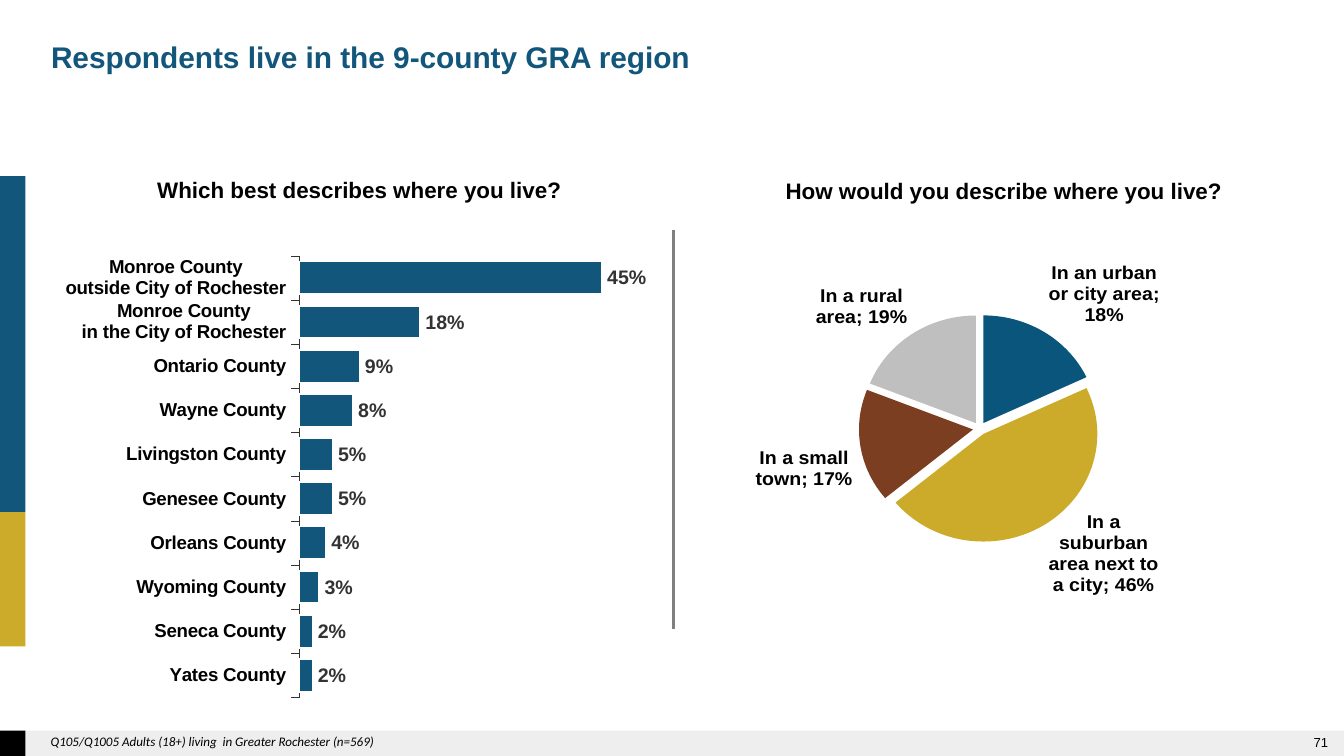
import pptx
import pptx.util
import pptx.dml.color
import pptx.chart.data
import pptx.enum.chart
import pptx.enum.dml
import pptx.enum.shapes
import pptx.enum.text
import pptx.oxml
import pptx.oxml.ns

Cm = pptx.util.Cm
Pt = pptx.util.Pt
RGB = pptx.dml.color.RGBColor.from_string
Align = pptx.enum.text.PP_ALIGN
Anchor = pptx.enum.text.MSO_ANCHOR
Fit = pptx.enum.text.MSO_AUTO_SIZE
Kind = pptx.enum.chart.XL_CHART_TYPE
Place = pptx.enum.chart.XL_LABEL_POSITION
Mark = pptx.enum.chart.XL_TICK_MARK
qn = pptx.oxml.ns.qn
space = pptx.oxml.ns.nsdecls("c")


class Theme:
    blue, gold, black, grey = "12567C", "CCAB2B", "000000", "808080"
    dark, band, white = "333333", "595959", "FFFFFF"
    slices = ["09557C", "CCAB2B", "7C3E20", "BFBFBF"]
    font, serif = "Arial", "Calibri"
    title, head, label, axis, small = 16, 12, 10.5, 10, 7


def style(font, size, color, bold=True, name=Theme.font):
    font.name = name
    font.size = Pt(size)
    font.bold = bold
    font.color.rgb = RGB(color)


def draw(box, kind, data, layout):
    chart = slide.shapes.add_chart(kind, *map(Cm, box), data).chart
    chart.has_legend = False
    chart.has_title = False
    style(chart.font, Theme.label, Theme.dark)
    parts = "".join(f'<c:{tag} val="{val}"/>' for tag, val in zip("xywh", layout))
    area = chart._chartSpace.find(".//" + qn("c:plotArea"))
    for old in area.findall(qn("c:layout")):
        area.remove(old)
    area.insert(0, pptx.oxml.parse_xml(
        f'<c:layout {space}><c:manualLayout><c:layoutTarget val="inner"/>'
        f'<c:xMode val="edge"/><c:yMode val="edge"/>{parts}</c:manualLayout></c:layout>'))
    plot = chart.plots[0]
    plot.vary_by_categories = kind == Kind.PIE
    labels = plot.series[0].data_labels
    labels.show_value = True
    labels.number_format = "0%"
    labels.number_format_is_linked = False
    labels.position = Place.OUTSIDE_END
    return chart, plot.series[0], labels


deck = pptx.Presentation()
deck.slide_width = Cm(25.4)
deck.slide_height = Cm(14.29)
slide = deck.slides.add_slide(deck.slide_layouts[5])

blocks = [
    (0, 13.81, 25.4, 0.48, Theme.band),
    (0, 3.33, 0.48, 6.35, Theme.blue),
    (0, 9.68, 0.48, 2.54, Theme.gold),
    (0, 13.81, 0.48, 0.48, Theme.black),
]
for *box, color in blocks:
    block = slide.shapes.add_shape(pptx.enum.shapes.MSO_SHAPE.RECTANGLE, *map(Cm, box))
    block.shadow.inherit = False
    block.fill.solid()
    block.fill.fore_color.rgb = RGB(color)
    block.line.fill.background()
    if color == Theme.band:
        tint = block._element.spPr.find(".//" + qn("a:srgbClr"))
        tint.append(pptx.oxml.parse_xml(
            f'<a:alpha {pptx.oxml.ns.nsdecls("a")} val="10000"/>'))

title = slide.shapes.title
title.left, title.top, title.width, title.height = map(Cm, (0.71, 0.61, 21.64, 1.27))
frame = title.text_frame
frame.word_wrap = True
frame.auto_size = Fit.NONE
frame.vertical_anchor = Anchor.TOP
frame.paragraphs[0].alignment = Align.LEFT
run = frame.paragraphs[0].add_run()
run.text = "Respondents live in the 9-county GRA region"
style(run.font, Theme.title, Theme.blue)

rule = slide.shapes.add_connector(
    pptx.enum.shapes.MSO_CONNECTOR.STRAIGHT, Cm(12.73), Cm(4.34), Cm(12.73), Cm(11.89))
rule.line.color.rgb = RGB(Theme.grey)
rule.line.width = Pt(2)
rule._element.spPr.append(pptx.oxml.parse_xml(
    f'<a:effectLst {pptx.oxml.ns.nsdecls("a")}/>'))

notes = [
    ((19.43, 13.81, 5.92, 0.43), "71",
     Align.RIGHT, Anchor.MIDDLE, Theme.small, False, Theme.font),
    ((0.71, 13.74, 16.71, 0.56),
     "Q105/Q1005 Adults (18+) living  in Greater Rochester (n=569)",
     Align.LEFT, Anchor.TOP, Theme.small, False, Theme.serif),
    ((2.31, 3.2, 8.97, 0.76), "Which best describes where you live?",
     Align.CENTER, Anchor.TOP, Theme.head, True, Theme.font),
    ((14.2, 3.23, 9.55, 0.76), "How would you describe where you live?",
     Align.CENTER, Anchor.TOP, Theme.head, True, Theme.font),
]
for box, text, align, anchor, size, bold, name in notes:
    frame = slide.shapes.add_textbox(*map(Cm, box)).text_frame
    frame.word_wrap = True
    frame.vertical_anchor = anchor
    frame.paragraphs[0].alignment = align
    run = frame.paragraphs[0].add_run()
    run.text = text
    style(run.font, size, Theme.black, bold, name)
    run.font.italic = name == Theme.serif

shares = [
    ("Yates County", 0.02),
    ("Seneca County", 0.02),
    ("Wyoming County", 0.03),
    ("Orleans County", 0.04),
    ("Genesee County", 0.05),
    ("Livingston County", 0.05),
    ("Wayne County", 0.08),
    ("Ontario County", 0.09),
    ("Monroe County\nin the City of Rochester", 0.18),
    ("Monroe County\noutside City of Rochester", 0.45),
]
data = pptx.chart.data.CategoryChartData(number_format="0%")
data.categories = [name for name, share in shares]
data.add_series("Share", [share for name, share in shares])
chart, bars, labels = draw((0.28, 4.83, 12.95, 8.36), Kind.BAR_CLUSTERED, data,
                           (0.415, 0, 0.491, 1))
style(labels.font, Theme.label, Theme.dark)
chart.plots[0].gap_width = 35
bars.format.fill.solid()
bars.format.fill.fore_color.rgb = RGB(Theme.blue)
bars.format.line.color.rgb = RGB(Theme.white)
bars.format.line.width = Pt(1)
axis = chart.value_axis
axis.visible = False
axis.has_major_gridlines = False
axis.minimum_scale, axis.maximum_scale, axis.major_unit = 0, 0.5, 0.25
axis = chart.category_axis
axis.has_major_gridlines = False
axis.major_tick_mark = Mark.OUTSIDE
axis.format.line.color.rgb = RGB(Theme.dark)
axis.format.line.width = Pt(0.25)
style(axis.tick_labels.font, Theme.axis, Theme.black)

data = pptx.chart.data.CategoryChartData(number_format="0%")
data.categories = ["In an urban or city area", "In a suburban area next to a city",
                   "In a small town", "In a rural area"]
data.add_series("Share", [0.18, 0.46, 0.17, 0.19])
chart, pie, labels = draw((13.82, 4.83, 10.82, 6.81), Kind.PIE, data,
                          (0.223, 0.173, 0.422, 0.671))
style(labels.font, Theme.label, Theme.black)
labels.show_category_name = True
labels._element.find(qn("c:showBubbleSize")).addnext(
    pptx.oxml.parse_xml(f"<c:separator {space}>; </c:separator>"))
for spot, color in enumerate(Theme.slices):
    fill = pie.points[spot].format.fill
    fill.solid()
    fill.fore_color.rgb = RGB(color)
pie._element.find(qn("c:dPt")).addprevious(
    pptx.oxml.parse_xml(f'<c:explosion {space} val="6"/>'))

deck.save("out.pptx")
